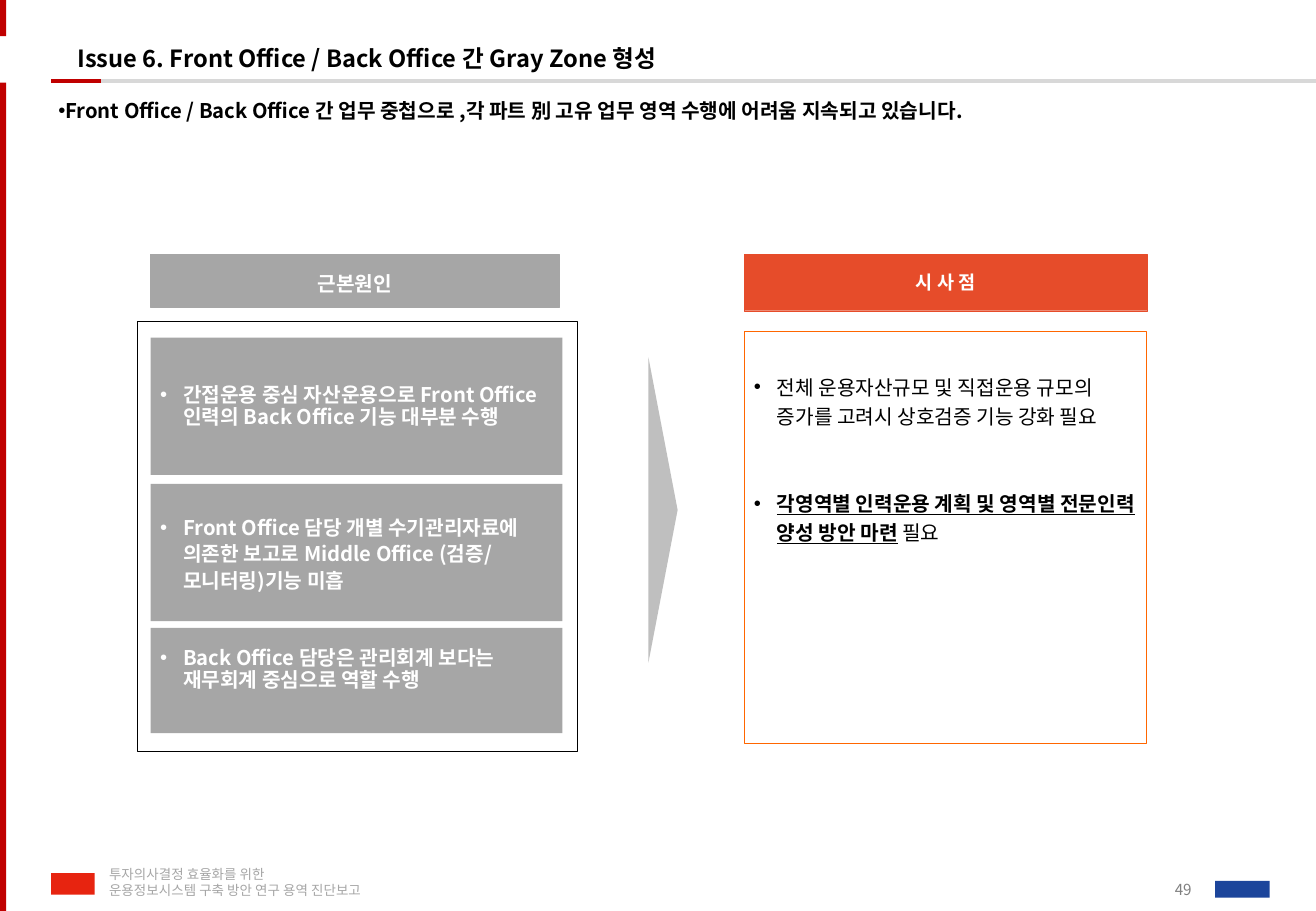
from pptx import Presentation
from pptx.dml.color import RGBColor
from pptx.enum.shapes import MSO_CONNECTOR as Link, MSO_SHAPE as Form
from pptx.enum.text import MSO_ANCHOR as Anchor, PP_ALIGN as Align
from pptx.oxml.ns import qn
from pptx.util import Cm, Pt
from lxml.etree import SubElement

BLACK = RGBColor(0x00, 0x00, 0x00)
WHITE = RGBColor(0xFF, 0xFF, 0xFF)
DARK_RED = RGBColor(0xC0, 0x00, 0x00)
RED = RGBColor(0xE7, 0x24, 0x10)
BLUE = RGBColor(0x1C, 0x45, 0x9B)
CORAL = RGBColor(0xE6, 0x4C, 0x2A)
ORANGE = RGBColor(0xFF, 0x66, 0x00)
RULE = RGBColor(0xD8, 0xD8, 0xD8)
ARROW = RGBColor(0xBF, 0xBF, 0xBF)
GRAY = RGBColor(0xA6, 0xA6, 0xA6)
PAGE = RGBColor(0x80, 0x80, 0x80)
FONT = "Noto Sans CJK KR"


class Deck:
    """Holds the style and the current slide."""

    def __init__(self, width, height):
        self.show = Presentation()
        self.show.slide_width, self.show.slide_height = Cm(width), Cm(height)
        self.slide = self.show.slides.add_slide(self.show.slide_layouts[6])

    def shape(self, place, fill, line=None, weight=0.25, form=Form.RECTANGLE, turn=0):
        item = self.slide.shapes.add_shape(form, *map(Cm, place))
        item.shadow.inherit = False
        item.rotation = turn
        item.fill.solid()
        item.fill.fore_color.rgb = fill
        if line is None:
            item.line.fill.background()
        else:
            item.line.color.rgb = line
            item.line.width = Pt(weight)
        return item

    def rule(self, start, end, level, color):
        ends = map(Cm, (start, level, end, level))
        item = self.slide.shapes.add_connector(Link.STRAIGHT, *ends)
        item.line.color.rgb = color
        item.line.width = Pt(2.25)
        SubElement(item._element.spPr, qn("a:effectLst"))

    def label(self, place, lines, **style):
        self.text(self.slide.shapes.add_textbox(*map(Cm, place)), lines, **style)

    def text(self, item, lines, size=12, color=BLACK, bold=False, pitch=None,
             gap=0, indent=None, align=Align.LEFT, anchor=Anchor.MIDDLE,
             pad=(0.25, 0.13, 0.25, 0.13), wrap=True):
        """Each line is a list of (words, extra font values) runs, or plain text."""
        frame = item.text_frame
        left, top, right, bottom = map(Cm, pad)
        look = {"margin_left": left, "margin_top": top, "margin_right": right,
                "margin_bottom": bottom, "vertical_anchor": anchor, "word_wrap": wrap}
        for name, value in look.items():
            setattr(frame, name, value)
        for place, line in enumerate(lines):
            para = frame.add_paragraph() if place else frame.paragraphs[0]
            if indent is not None:
                self.bullet(para, indent)
            para.alignment = align
            para.line_spacing = Pt(pitch or size * 1.2)
            para.space_before = Pt(gap if place else 0)
            for words, extra in [(line, {})] if isinstance(line, str) else line:
                self.run(para, words, {"size": Pt(size), "bold": bold, **extra}, color)

    def bullet(self, para, indent):
        props = para._p.get_or_add_pPr()
        props.set("marL", str(Cm(indent)))
        props.set("indent", str(-Cm(indent)))
        SubElement(props, qn("a:buFont")).set("typeface", "Arial")
        SubElement(props, qn("a:buChar")).set("char", "•")

    def run(self, para, words, look, color):
        run = para.add_run()
        run.text = words
        for name, value in {"name": FONT, **look}.items():
            setattr(run.font, name, value)
        run.font.color.rgb = color
        SubElement(run._r.get_or_add_rPr(), qn("a:ea")).set("typeface", FONT)


def main():
    deck = Deck(27.51, 19.05)

    # Side bars and title rules
    deck.shape((0, 1.73, 0.13, 17.32), DARK_RED)
    deck.shape((0, 0, 0.13, 0.76), DARK_RED)
    deck.rule(1.07, 27.51, 1.7, RULE)
    deck.rule(1.07, 2.11, 1.7, DARK_RED)

    # Footer
    deck.shape((1.07, 18.26, 0.91, 0.45), RED)
    deck.shape((25.4, 18.42, 1.14, 0.35), BLUE)
    deck.label((2.03, 18.01, 7.11, 0.89),
               ["투자의사결정 효율화를 위한", "운용정보시스템 구축 방안 연구 용역 진단보고"],
               size=8, color=GRAY, pitch=9.5, wrap=False)
    deck.label((23.44, 18.14, 1.47, 0.91), ["49"], size=9, color=PAGE,
               align=Align.RIGHT, pad=(0, 0, 0, 0))

    # Title and key message
    deck.label((1.37, 0.76, 21.59, 0.91),
               ["Issue 6. Front Office / Back Office 간 Gray Zone 형성"], size=14, bold=True)
    deck.label((0.97, 1.93, 24.77, 1.5),
               ["Front Office / Back Office 간 업무 중첩으로 ,각 파트 別 고유 업무 영역 "
                "수행에 어려움 지속되고 있습니다."],
               bold=True, indent=0, anchor=Anchor.TOP)

    # Root causes
    white = {"color": WHITE, "bold": True}
    deck.shape((2.87, 6.72, 9.19, 8.99), WHITE, BLACK)
    head = deck.shape((3.15, 5.32, 8.54, 1.1), GRAY, GRAY)
    deck.text(head, ["근본원인"], pitch=17.2, align=Align.CENTER, **white)
    causes = [
        (7.06, 2.87, 13, 0.2,
         "간접운용 중심 자산운용으로 Front Office 인력의 Back Office 기능 대부분 수행"),
        (10.12, 2.87, 15.7, 0.2,
         "Front Office 담당 개별 수기관리자료에 의존한 보고로 "
         "Middle Office (검증/ 모니터링)기능 미흡"),
        (13.13, 2.2, 13, 0.66,
         "Back Office 담당은 관리회계 보다는 재무회계 중심으로 역할 수행"),
    ]
    for top, height, pitch, foot, words in causes:
        card = deck.shape((3.15, top, 8.61, height), GRAY)
        deck.text(card, [words], pitch=pitch, indent=0.48, pad=(0.2, 0.2, 0.2, foot), **white)

    # Arrow
    deck.shape((10.67, 10.36, 6.38, 0.61), ARROW, form=Form.ISOSCELES_TRIANGLE, turn=90)

    # Findings
    head = deck.shape((15.56, 5.32, 8.42, 1.18), CORAL, CORAL)
    deck.text(head, ["시 사 점"], size=11, align=Align.CENTER, wrap=False, **white)
    panel = deck.shape((15.56, 6.93, 8.4, 8.61), WHITE, ORANGE, 0.5)
    deck.text(panel,
              ["전체 운용자산규모 및 직접운용 규모의 증가를 고려시 상호검증 기능 강화 필요",
               [("각영역별 인력운용 계획 및 영역별 전문인력 양성 방안 마련",
                 {"bold": True, "underline": True}), (" 필요", {})]],
              pitch=17.2, gap=34.5, indent=0.48, anchor=Anchor.TOP,
              pad=(0.2, 0.81, 0.2, 0.13))

    deck.show.save("out.pptx")


if __name__ == "__main__":
    main()
